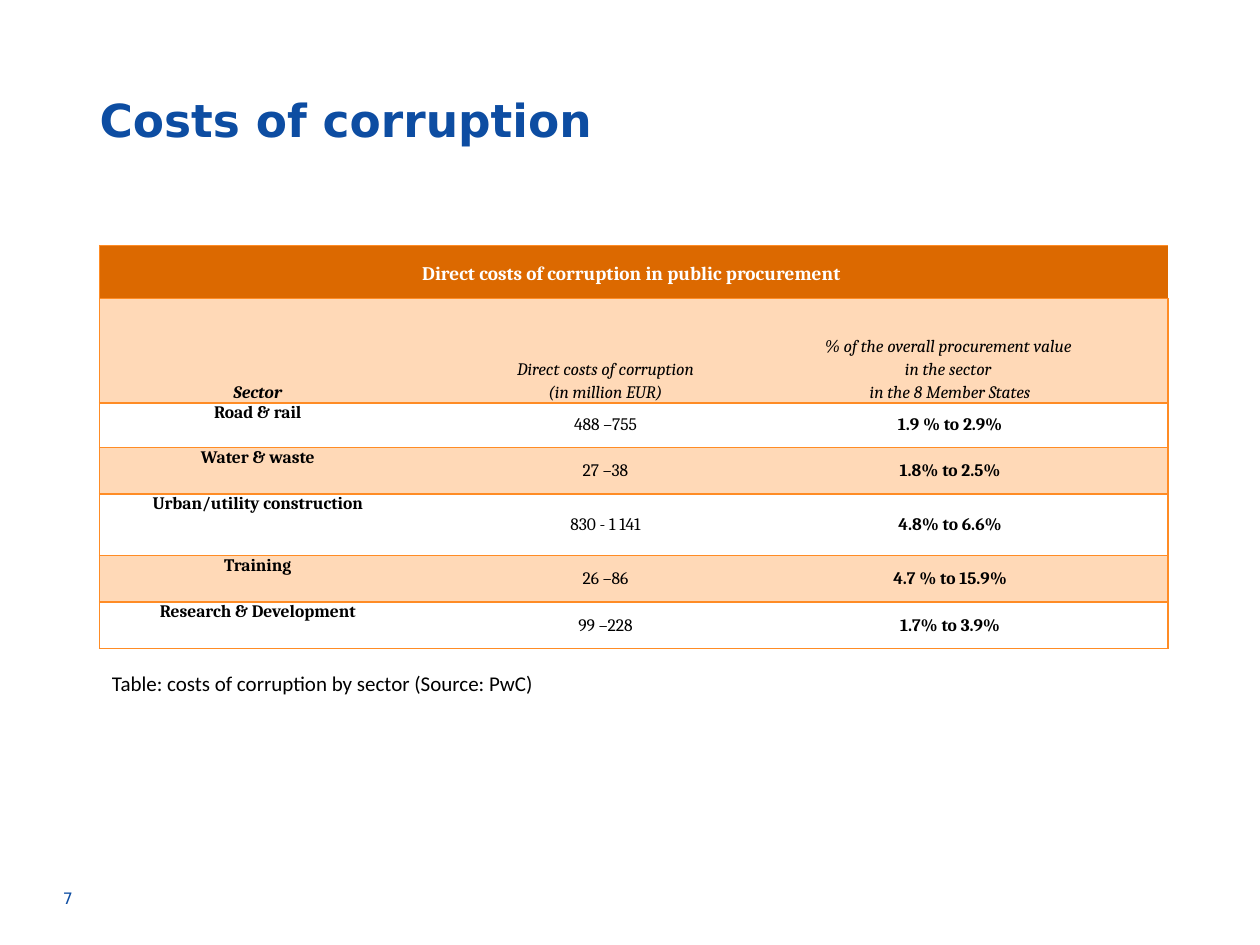
from lxml.etree import SubElement
from pptx import Presentation
from pptx.dml.color import RGBColor
from pptx.enum.text import MSO_ANCHOR as Anchor, PP_ALIGN as Align
from pptx.oxml.ns import qn
from pptx.util import Inches, Pt

BLUE = RGBColor(0x0D, 0x4D, 0xA2)
ORANGE = RGBColor(0xFF, 0x8C, 0x25)
DARK_ORANGE = RGBColor(0xDC, 0x69, 0x00)
PEACH = RGBColor(0xFF, 0xD9, 0xB7)
WHITE = RGBColor(0xFF, 0xFF, 0xFF)
BLACK = RGBColor(0, 0, 0)

COLUMN_WIDTHS = [2.51, 2.51, 3.46]
ROW_HEIGHTS = [0.42, 0.83, 0.35, 0.37, 0.49, 0.37, 0.37]
TABLE_TITLE = "Direct costs of corruption in public procurement "
HEADINGS = [
    "Sector",
    "Direct costs of corruption\v(in million EUR)",
    "% of the overall procurement value \vin the sector \vin the 8 Member States",
]
SECTORS = [
    ("Road & rail", "488 –755", "1.9 % to 2.9%"),
    ("Water & waste", "27 –38", "1.8% to 2.5%"),
    ("Urban/utility construction", "830 - 1 141", "4.8% to 6.6%"),
    ("Training", "26 –86", "4.7 % to 15.9%"),
    ("Research & Development", "99 –228", "1.7% to 3.9%"),
]


def format_runs(paragraph, font_name, size, color, bold=False, italic=False):
    for run in paragraph.runs:
        font = run.font
        font.name, font.size = font_name, Pt(size)
        font.bold, font.italic = bold, italic
        font.color.rgb = color


def add_text(slide, text, left, top, width, height, font_name, size, color,
             bold=False, margins=(0, 0)):
    """Add a one-paragraph text box; margins are horizontal and vertical."""
    box = slide.shapes.add_textbox(Inches(left), Inches(top), Inches(width), Inches(height))
    frame = box.text_frame
    frame.word_wrap = True
    frame.margin_left = frame.margin_right = Inches(margins[0])
    frame.margin_top = frame.margin_bottom = Inches(margins[1])
    frame.text = text
    format_runs(frame.paragraphs[0], font_name, size, color, bold)


def set_borders(cell, visible_sides):
    """Draw the given sides (from "LRTB") in orange and hide the others."""
    properties = cell._tc.get_or_add_tcPr()
    for side in "LRTB":
        line = SubElement(properties, qn(f"a:ln{side}"), w=str(Pt(1)))
        if side in visible_sides:
            fill = SubElement(line, qn("a:solidFill"))
            SubElement(fill, qn("a:srgbClr"), val=str(ORANGE))
        else:
            SubElement(line, qn("a:noFill"))


def fill_cell(cell, text, fill, anchor, size=10, color=BLACK, bold=False,
              italic=False, indent=0, line_spacing=None, space_after=None):
    cell.fill.solid()
    cell.fill.fore_color.rgb = fill
    cell.vertical_anchor = anchor
    cell.margin_left = cell.margin_right = Inches(0.07)
    cell.margin_top = cell.margin_bottom = 0
    cell.text_frame.text = text
    paragraph = cell.text_frame.paragraphs[0]
    paragraph.alignment = Align.CENTER
    if indent:
        paragraph._p.get_or_add_pPr().set("marL", str(Inches(indent)))
    if line_spacing:
        paragraph.line_spacing = line_spacing
    if space_after:
        paragraph.space_after = Pt(space_after)
    format_runs(paragraph, "Cambria", size, color, bold, italic)


def add_cost_table(slide):
    frame = slide.shapes.add_table(
        len(ROW_HEIGHTS), len(COLUMN_WIDTHS), Inches(0.79), Inches(1.95),
        Inches(sum(COLUMN_WIDTHS)), Inches(sum(ROW_HEIGHTS)))
    table = frame.table
    table.first_row = table.horz_banding = False
    for column, width in zip(table.columns, COLUMN_WIDTHS):
        column.width = Inches(width)
    for row, height in zip(table.rows, ROW_HEIGHTS):
        row.height = Inches(height)
        for cell, sides in zip(row.cells, ("LTB", "TB", "RTB")):
            set_borders(cell, sides)

    title = table.cell(0, 0)
    title.merge(table.cell(0, 2))
    fill_cell(title, TABLE_TITLE, DARK_ORANGE, Anchor.MIDDLE, size=11,
              color=WHITE, bold=True, line_spacing=1.15)

    indents = (0, 0.5, 0)
    for column, heading in enumerate(HEADINGS):
        fill_cell(table.cell(1, column), heading, PEACH, Anchor.BOTTOM,
                  bold=column == 0, italic=True, indent=indents[column],
                  line_spacing=1.15)
    for row, values in enumerate(SECTORS, start=2):
        for column, value in enumerate(values):
            fill_cell(table.cell(row, column), value,
                      PEACH if row % 2 else WHITE,
                      Anchor.MIDDLE if column else Anchor.TOP,
                      bold=column != 1, indent=indents[column], space_after=2)


def main():
    presentation = Presentation()
    presentation.slide_width, presentation.slide_height = Inches(10), Inches(7.5)
    slide = presentation.slides.add_slide(presentation.slide_layouts[6])
    add_text(slide, "7", 0.5, 7.05, 2.33, 0.4, "DejaVu Sans", 9, BLUE)
    add_cost_table(slide)
    add_text(slide, "Table: costs of corruption by sector (Source: PwC)",
             0.79, 5.27, 8.71, 0.3, "Calibri", 12, BLACK, margins=(0.1, 0.05))
    add_text(slide, "Costs of corruption", 0.79, 0.73, 9, 1.25,
             "DejaVu Sans", 26, BLUE, bold=True)
    presentation.save("out.pptx")


if __name__ == "__main__":
    main()
